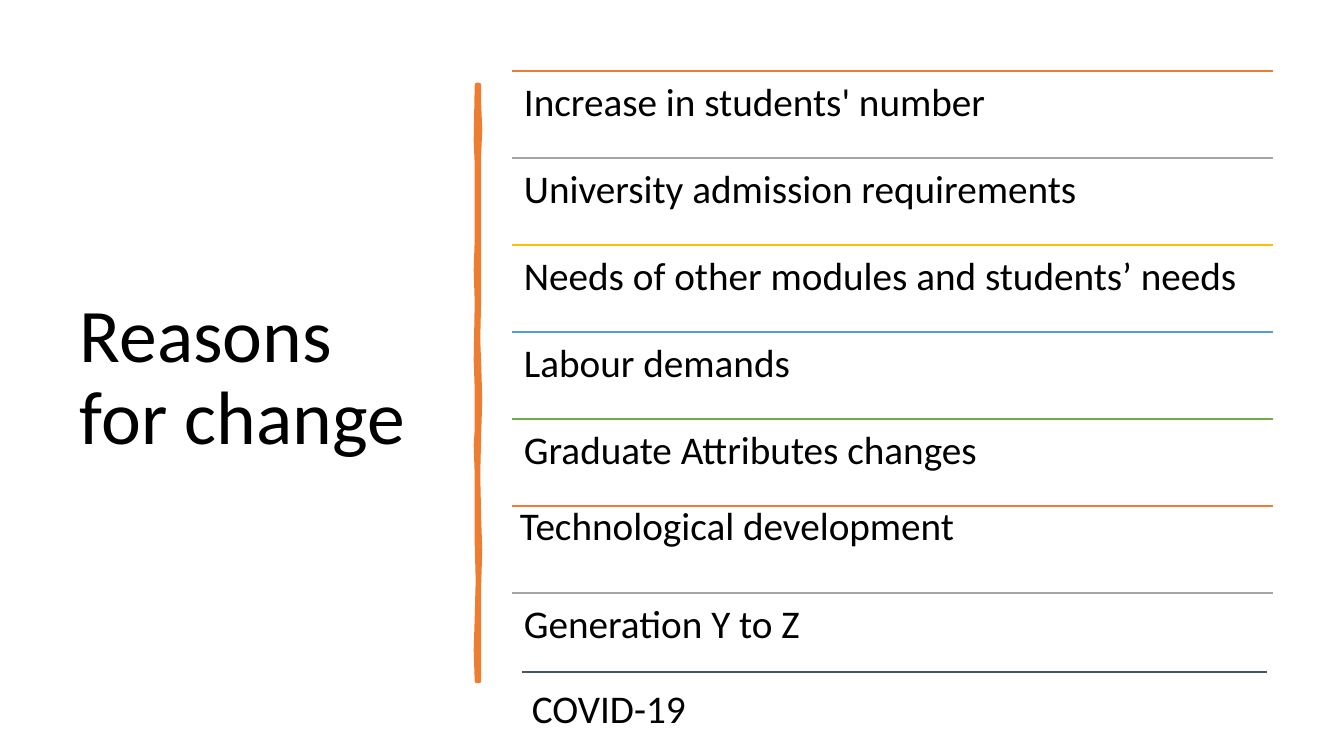
import pptx
import pptx.util
import pptx.dml.color
import pptx.enum.shapes
import pptx.enum.text
import pptx.oxml.ns
import lxml.etree

TITLE = "Reasons for change"
REASONS = [  # rule colour, paragraphs below the rule
    ("ED7D31", ["Increase in students' number"]),
    ("A5A5A5", ["University admission requirements"]),
    ("FFC000", ["Needs of other modules and students’ needs"]),
    ("599BD5", ["Labour demands"]),
    ("70AD47", ["Graduate Attributes changes"]),
    ("ED7D31", ["Technological development"]),
    ("A5A5A5", ["Generation Y to Z", "COVID-19"]),
]
TEXT_SHIFT = {"Technological development": (-4, -11)}
FONT, BLACK, ORANGE, SLATE = "Calibri", "000000", "ED7D31", "44546A"

# Lengths in px
SLIDE_WIDTH, SLIDE_HEIGHT = 1344, 756
TITLE_BOX = (70, 71, 377, 616)
LIST_LEFT, LIST_TOP, LIST_WIDTH, ROW_HEIGHT = 512, 71, 761, 87
LAST_RULE = (522, 672, 1267)
BAR_RIGHT = [(479, 85), (479, 105), (480, 130), (479, 153), (479, 210),
             (479, 296), (478, 340), (479, 365), (480, 400), (479, 433),
             (478, 475), (479, 520), (480, 550), (479, 583), (479, 681)]
BAR_LEFT = [(477, 681), (476, 650), (477, 618), (478, 580), (477, 543),
            (477, 510), (477, 475), (476, 445), (477, 430), (477, 389),
            (476, 360), (477, 302), (476, 270), (477, 240), (477, 190),
            (477, 165), (476, 140), (477, 85)]


def px(length):
    return pptx.util.Emu(round(length * 914400 / 100.8))


def colour(value):
    return pptx.dml.color.RGBColor.from_string(value)


def add_text(slide, box, paragraphs, size, margins, anchor):
    shape = slide.shapes.add_textbox(*map(px, box))
    frame = shape.text_frame
    frame.word_wrap = True
    frame.vertical_anchor = anchor
    (frame.margin_left, frame.margin_top,
     frame.margin_right, frame.margin_bottom) = map(px, margins)
    frame.text = "\n".join(paragraphs)
    for paragraph in frame.paragraphs:
        paragraph.line_spacing = 0.9
        paragraph.font.name = FONT
        paragraph.font.size = pptx.util.Pt(size)
        paragraph.font.color.rgb = colour(BLACK)
    return frame


def add_rule(slide, left, top, right, line_colour, width):
    rule = slide.shapes.add_connector(
        pptx.enum.shapes.MSO_CONNECTOR.STRAIGHT, px(left), px(top), px(right), px(top))
    rule.line.color.rgb = colour(line_colour)
    rule.line.width = pptx.util.Pt(width)
    lxml.etree.SubElement(rule._element.spPr, pptx.oxml.ns.qn("a:effectLst"))


def add_bar(slide):
    start, *rest = BAR_RIGHT + BAR_LEFT
    builder = slide.shapes.build_freeform(*start, scale=px(1))
    builder.add_line_segments(rest, close=True)
    bar = builder.convert_to_shape()
    bar.shadow.inherit = False
    bar.fill.solid()
    bar.fill.fore_color.rgb = colour(ORANGE)
    bar.line.color.rgb = colour(ORANGE)
    bar.line.width = pptx.util.Pt(3.25)


def main():
    presentation = pptx.Presentation()
    presentation.slide_width = px(SLIDE_WIDTH)
    presentation.slide_height = px(SLIDE_HEIGHT)
    slide = presentation.slides.add_slide(presentation.slide_layouts[6])
    anchors = pptx.enum.text.MSO_ANCHOR

    # Title and hand-drawn divider
    add_text(slide, TITLE_BOX, [TITLE], 54, (10, 5, 20, 5), anchors.MIDDLE)
    add_bar(slide)

    # Reasons, each below its rule
    for index, (rule_colour, paragraphs) in enumerate(REASONS):
        top = LIST_TOP + index * ROW_HEIGHT
        add_rule(slide, LIST_LEFT, top, LIST_LEFT + LIST_WIDTH, rule_colour, 1)
        shift_x, shift_y = TEXT_SHIFT.get(paragraphs[0], (0, 0))
        box = (LIST_LEFT + shift_x, top + shift_y, LIST_WIDTH, ROW_HEIGHT)
        frame = add_text(slide, box, paragraphs, 28, (12, 12, 12, 12), anchors.TOP)
        for paragraph in frame.paragraphs[1:]:
            paragraph.space_before = pptx.util.Pt(30)
            paragraph._p.get_or_add_pPr().set("marL", str(px(8)))

    # Rule above the last reason
    left, top, right = LAST_RULE
    add_rule(slide, left, top, right, SLATE, 0.75)

    presentation.save("out.pptx")


if __name__ == "__main__":
    main()
